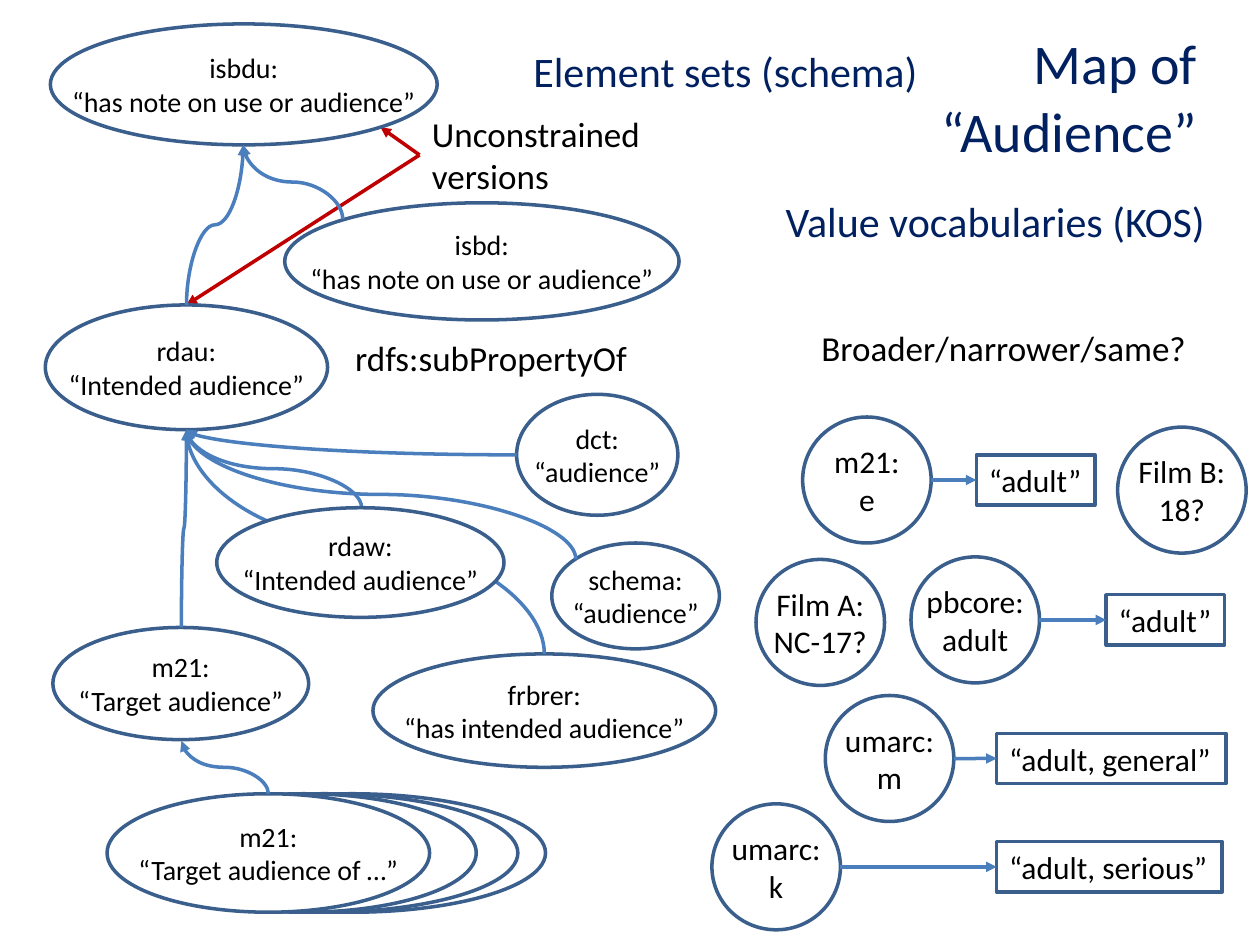
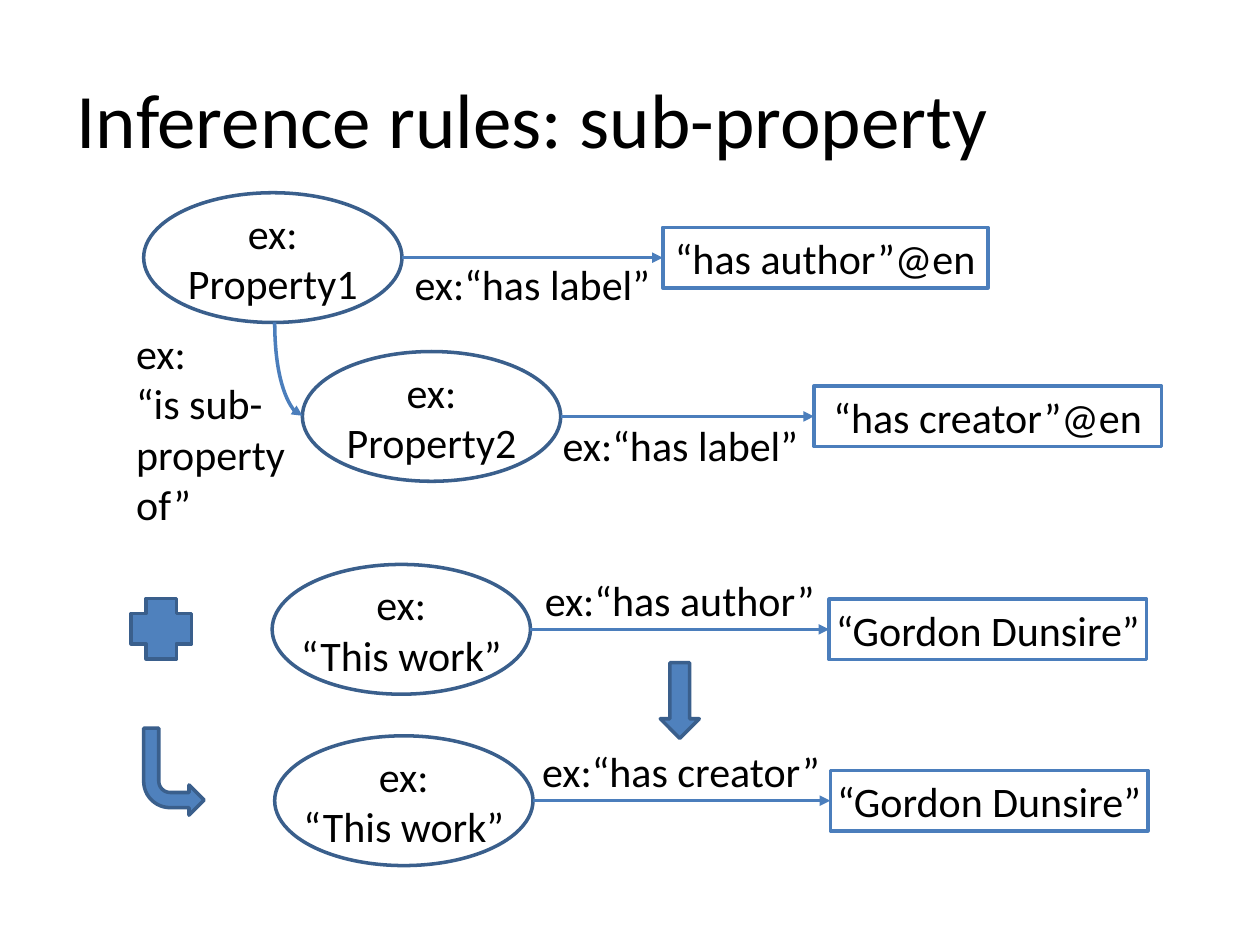
"""Build two slides on audience element sets and sub-property inference."""
from dataclasses import dataclass

from lxml import etree
from pptx import Presentation
from pptx import util as u
from pptx.dml.color import RGBColor
from pptx.enum import shapes, text
from pptx.oxml.ns import qn


@dataclass(frozen=True)
class Theme:
    font: str = "Calibri"
    ink: str = "000000"
    navy: str = "002060"
    white: str = "FFFFFF"
    outline: str = "3A5F8C"
    accent: str = "4B7EBC"
    solid: str = "4F81BD"
    red: str = "C00000"
    line: float = 2
    small: int = 16
    code: int = 18
    note: int = 20
    label: int = 24
    heading: int = 32
    title: int = 44


T = Theme()
SHAPE = shapes.MSO_SHAPE
LEFT, CENTER, RIGHT = text.PP_ALIGN.LEFT, text.PP_ALIGN.CENTER, text.PP_ALIGN.RIGHT
ROUTES = {
    "up-left": ("curvedConnector3", 270, ["flipV"]),
    "up-right": ("curvedConnector3", 90, ["flipH", "flipV"]),
    "left-up": ("curvedConnector2", 180, []),
    "down-right": ("curvedConnector2", 270, ["flipH"]),
}


def block(s, kind, at, words="", size=T.label, align=CENTER, color=T.ink,
          fill=None, line=T.outline, inset=0.04):
    at = [u.Inches(v) for v in at]
    if kind is None:
        sp = s.shapes.add_textbox(*at)
    else:
        sp = s.shapes.add_shape(kind, *at)
        sp.shadow.inherit = False
        sp.line.color.rgb = RGBColor.from_string(line)
        sp.line.width = u.Pt(T.line)
        if fill:
            sp.fill.solid()
            sp.fill.fore_color.rgb = RGBColor.from_string(fill)
        else:
            sp.fill.background()
    if words:
        tf = sp.text_frame
        tf.word_wrap = False
        tf.margin_left = tf.margin_right = u.Inches(2 * inset if inset > 0.04 else inset)
        tf.margin_top = tf.margin_bottom = u.Inches(inset)
        tf.vertical_anchor = text.MSO_ANCHOR.MIDDLE if kind else text.MSO_ANCHOR.TOP
        for i, words_line in enumerate(words.split("\n")):
            p = tf.add_paragraph() if i else tf.paragraphs[0]
            p.text = words_line
            p.alignment = align
            p.font.name, p.font.size = T.font, u.Pt(size)
            p.font.color.rgb = RGBColor.from_string(color)
    return sp


def link(s, start, end, color=T.accent, route=None, curved=False, box=None):
    (x1, y1), (x2, y2) = start, end
    kind = shapes.MSO_CONNECTOR.CURVE if route or curved else shapes.MSO_CONNECTOR.STRAIGHT
    c = s.shapes.add_connector(kind, *[u.Inches(v) for v in (x1, y1, x2, y2)])
    if box is not None:
        c.end_connect(box, 1)
    c.line.color.rgb = RGBColor.from_string(color)
    c.line.width = u.Pt(T.line)
    sp_pr = c.element.spPr
    if route:
        prst, rot, flips = ROUTES[route]
        w, h = abs(x2 - x1), abs(y2 - y1)
        if rot != 180:
            w, h = h, w
        c.left, c.top = u.Inches((x1 + x2 - w) / 2), u.Inches((y1 + y2 - h) / 2)
        c.width, c.height = u.Inches(w), u.Inches(h)
        xfrm = sp_pr.find(qn("a:xfrm"))
        xfrm.attrib.clear()
        xfrm.set("rot", str(rot * 60000))
        for flip in flips:
            xfrm.set(flip, "1")
        sp_pr.find(qn("a:prstGeom")).set("prst", prst)
    etree.SubElement(sp_pr.find(qn("a:ln")), qn("a:tailEnd"), type="triangle")
    etree.SubElement(sp_pr, qn("a:effectLst"))


prs = Presentation()
prs.slide_width, prs.slide_height = u.Inches(10), u.Inches(7.5)

s = prs.slides.add_slide(prs.slide_layouts[6])
for at, words, size, align, color in [
    ((3.33, 0.84, 1.87, 0.77), "Unconstrained\nversions", T.note, LEFT, T.ink),
    ((7.35, 0.18, 2.25, 1.18), "Map of\n“Audience”", T.heading, RIGHT, T.navy),
    ((4.1, 0.31, 3.28, 0.5), "Element sets (schema)", T.label, RIGHT, T.navy),
    ((6.12, 1.5, 3.56, 0.5), "Value vocabularies (KOS)", T.label, CENTER, T.navy),
    ((6.42, 2.54, 3.12, 0.44), "Broader/narrower/same?", T.note, LEFT, T.ink),
    ((2.72, 2.62, 2.38, 0.44), "rdfs:subPropertyOf", T.note, LEFT, T.ink),
]:
    block(s, None, at, words, size, align, color, inset=0.05)

for target in [(3.02, 1.01), (1.48, 2.42)]:
    link(s, (3.33, 1.23), target, T.red)

for x, y, code, value, box_x, box_w in [
    (6.55, 5.52, "umarc:\nm", "“adult, general”", 7.91, 1.82),
    (5.65, 6.38, "umarc:\nk", "“adult, serious”", 7.91, 1.79),
    (7.23, 4.42, "pbcore:\nadult", "“adult”", 8.78, 0.94),
    (6.37, 3.31, "m21:\ne", "“adult”", 7.75, 0.94),
    (6, 4.44, "Film A:\nNC-17?", None, 0, 0),
    (8.87, 3.39, "Film B:\n18?", None, 0, 0),
]:
    block(s, SHAPE.OVAL, (x, y, 1.02, 1), code, T.code)
    if value:
        box = block(s, SHAPE.RECTANGLE, (box_x, y + 0.3, box_w, 0.4), value, T.code, LEFT, inset=0.05)
        link(s, (x + 1.02, y + 0.5), (box_x, y + 0.51), curved=True, box=box)

for x, w in [(1.26, 3.07), (1.04, 3.07), (1.04, 2.74)]:
    block(s, SHAPE.OVAL, (x, 6.3, w, 0.94), fill=T.white)

for at, words in [
    ((0.85, 6.3, 2.56, 0.94), "m21:\n“Target audience of …”"),
    ((0.42, 4.98, 2.03, 0.89), "m21:\n“Target audience”"),
    ((2.96, 5.19, 2.72, 0.9), "frbrer:\n“has intended audience”"),
    ((4.38, 4.31, 1.33, 0.84), "schema:\n“audience”"),
    ((4.1, 3.13, 1.28, 0.96), "dct:\n“audience”"),
    ((0.36, 2.42, 2.24, 0.99), "rdau:\n“Intended audience”"),
    ((2.26, 1.61, 3.13, 0.93), "isbd:\n“has note on use or audience”"),
    ((0.4, 0.19, 3.07, 0.96), "isbdu:\n“has note on use or audience”"),
]:
    block(s, SHAPE.OVAL, at, words, T.small, fill=T.white)

isbdu_foot, rdau_foot = (1.93, 1.15), (1.48, 3.41)
for start, end, route in [
    ((2.72, 1.74), isbdu_foot, "up-left"),
    ((2.13, 6.3), (1.44, 5.88), "up-left"),
    ((1.44, 4.98), rdau_foot, "up-right"),
    ((2.87, 4.03), rdau_foot, "up-left"),
    ((4.32, 5.19), rdau_foot, "up-left"),
    ((4.57, 4.44), rdau_foot, "up-left"),
    ((4.1, 3.61), rdau_foot, "left-up"),
    ((1.48, 2.42), isbdu_foot, "up-right"),
]:
    link(s, start, end, route=route)
block(s, SHAPE.OVAL, (1.72, 4.03, 2.28, 0.87), "rdaw:\n“Intended audience”", T.small, fill=T.white)

s = prs.slides.add_slide(prs.slide_layouts[6])
block(s, None, (0.51, 0.52, 7.51, 0.84), "Inference rules: sub-property", T.title, LEFT, inset=0.05)

for x, y, subject, value, box_x, box_w, label, label_at in [
    (1.14, 1.53, "ex:\nProperty1", "“has author”@en", 5.26, 2.58, "ex:“has label”", (3.19, 2.01, 2.07, 0.48)),
    (2.4, 2.79, "ex:\nProperty2", "“has creator”@en", 6.46, 2.76, "ex:“has label”", (4.36, 3.29, 2.08, 0.48)),
    (2.16, 4.48, "ex:\n“This work”", "“Gordon Dunsire”", 6.58, 2.52, "ex:“has author”", (4.21, 4.52, 2.37, 0.48)),
    (2.18, 5.84, "ex:\n“This work”", "“Gordon Dunsire”", 6.59, 2.52, "ex:“has creator”", (4.22, 5.88, 2.37, 0.48)),
]:
    middle = y + 0.515
    block(s, SHAPE.OVAL, (x, y, 2.05, 1.03), subject)
    box = block(s, SHAPE.RECTANGLE, (box_x, middle - 0.24, box_w, 0.48), value, line=T.accent)
    link(s, (x + 2.05, middle), (box_x, middle), box=box)
    block(s, None, label_at, label)

link(s, (2.18, 2.56), (2.4, 3.3), route="down-right")
sp = block(s, None, (1.04, 2.56, 1.49, 1.7), "ex:\n“is sub-\nproperty\nof”", align=LEFT)
sp.text_frame.word_wrap = True

block(s, SHAPE.CROSS, (1.04, 4.75, 0.48, 0.48), fill=T.solid)
block(s, SHAPE.DOWN_ARROW, (5.24, 5.26, 0.31, 0.6), fill=T.solid)
sp = block(s, SHAPE.BENT_ARROW, (1.14, 5.78, 0.48, 0.69), fill=T.solid)
sp.element.spPr.find(qn("a:xfrm")).set("flipV", "1")

prs.save("out.pptx")
